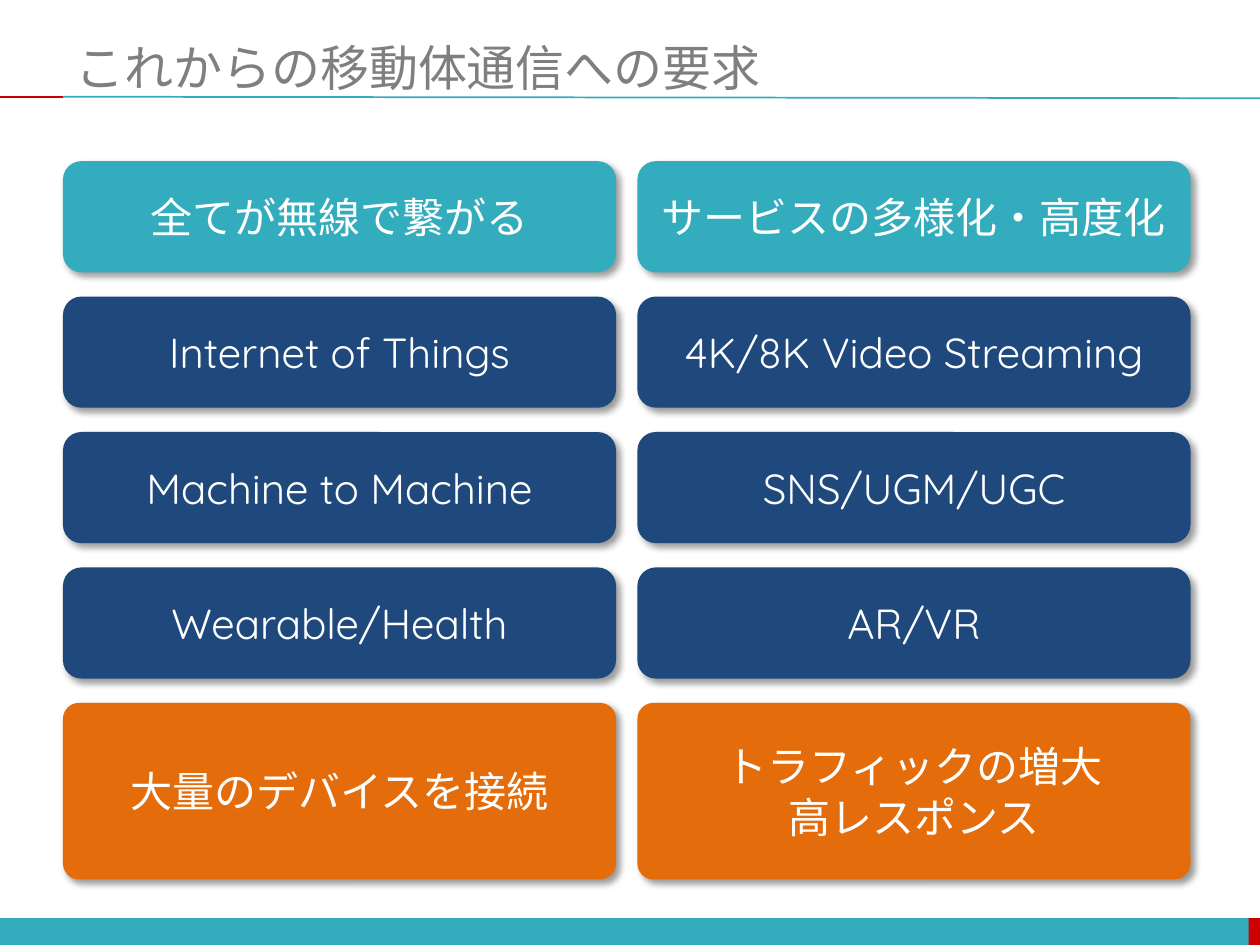
"""Build the slide on the demands placed on future mobile communication."""
from lxml import etree
from pptx import Presentation
from pptx.dml.color import RGBColor
from pptx.enum import shapes, text
from pptx.oxml import parse_xml
from pptx.oxml.ns import nsdecls, qn
from pptx.util import Cm, Pt

TEAL = RGBColor(0x33, 0xAC, 0xBD)
RED = RGBColor(0xCC, 0x00, 0x00)
NAVY = RGBColor(0x1F, 0x49, 0x7D)
ORANGE = RGBColor(0xE4, 0x6C, 0x0A)
GRAY = RGBColor(0x7F, 0x7F, 0x7F)
WHITE = RGBColor(0xFF, 0xFF, 0xFF)
FONT = "Quicksand"
SHADOW = f"""<a:effectLst {nsdecls('a')}>
  <a:outerShdw blurRad="50800" dist="38100" dir="2700000" algn="tl" rotWithShape="0">
    <a:srgbClr val="000000"><a:alpha val="40000"/></a:srgbClr>
  </a:outerShdw>
</a:effectLst>"""


def style(p, size, color, align):
    p.alignment = align
    p.font.name, p.font.size = FONT, Pt(size)
    p.font.color.rgb = color
    latin = p._p.pPr.find(qn("a:defRPr")).find(qn("a:latin"))
    ea = etree.Element(qn("a:ea"), typeface=FONT)
    latin.addnext(ea)


def add_block(kind, x, y, w, h, color):
    sp = s.shapes.add_shape(kind, Cm(x), Cm(y), Cm(w), Cm(h))
    sp.shadow.inherit = False
    sp.fill.solid()
    sp.fill.fore_color.rgb = color
    sp.line.fill.background()
    return sp


prs = Presentation()
prs.slide_width, prs.slide_height = Cm(25.4), Cm(19.05)
s = prs.slides.add_slide(prs.slide_layouts[5])

for x, w, color in [(0, 25.4, TEAL), (25.17, 0.25, RED)]:
    add_block(shapes.MSO_SHAPE.RECTANGLE, x, 18.51, w, 0.55, color)

for x1, x2, y2, color in [(1.27, 25.4, 1.98, TEAL), (0, 1.27, 1.95, RED)]:
    cn = s.shapes.add_connector(
        shapes.MSO_CONNECTOR.STRAIGHT, Cm(x1), Cm(1.95), Cm(x2), Cm(y2))
    cn.line.color.rgb = color
    cn.line.width = Pt(1)
    etree.SubElement(cn._element.spPr, qn("a:effectLst"))

title = s.shapes.title
title.left, title.top, title.width, title.height = Cm(1.27), Cm(0.76), Cm(24.13), Cm(1.17)
tf = title.text_frame
tf.text = "これからの移動体通信への要求"
tf.auto_size = text.MSO_AUTO_SIZE.NONE
tf.vertical_anchor = text.MSO_ANCHOR.MIDDLE
style(tf.paragraphs[0], 28, GRAY, text.PP_ALIGN.LEFT)

rows = [
    (TEAL, 2.24, "全てが無線で繋がる", "サービスの多様化・高度化"),
    (NAVY, 2.24, "Internet of Things", "4K/8K Video Streaming"),
    (NAVY, 2.24, "Machine to Machine", "SNS/UGM/UGC"),
    (NAVY, 2.24, "Wearable/Health", "AR/VR"),
    (ORANGE, 3.56, "大量のデバイスを接続", "トラフィックの増大\n高レスポンス"),
]
for i, (color, height, *labels) in enumerate(rows):
    for j, label in enumerate(labels):
        sp = add_block(shapes.MSO_SHAPE.ROUNDED_RECTANGLE,
                       1.27 + 11.58 * j, 3.25 + 2.73 * i, 11.15, height, color)
        sp.adjustments[0] = 0.37 / height if color == NAVY or color == TEAL else 0.09
        sp._element.spPr.replace(sp._element.spPr.find(qn("a:effectLst")), parse_xml(SHADOW))
        tf = sp.text_frame
        tf.word_wrap = True
        tf.vertical_anchor = text.MSO_ANCHOR.MIDDLE
        tf.text = label
        for p in tf.paragraphs:
            style(p, 24, WHITE, text.PP_ALIGN.CENTER)

prs.save("out.pptx")
